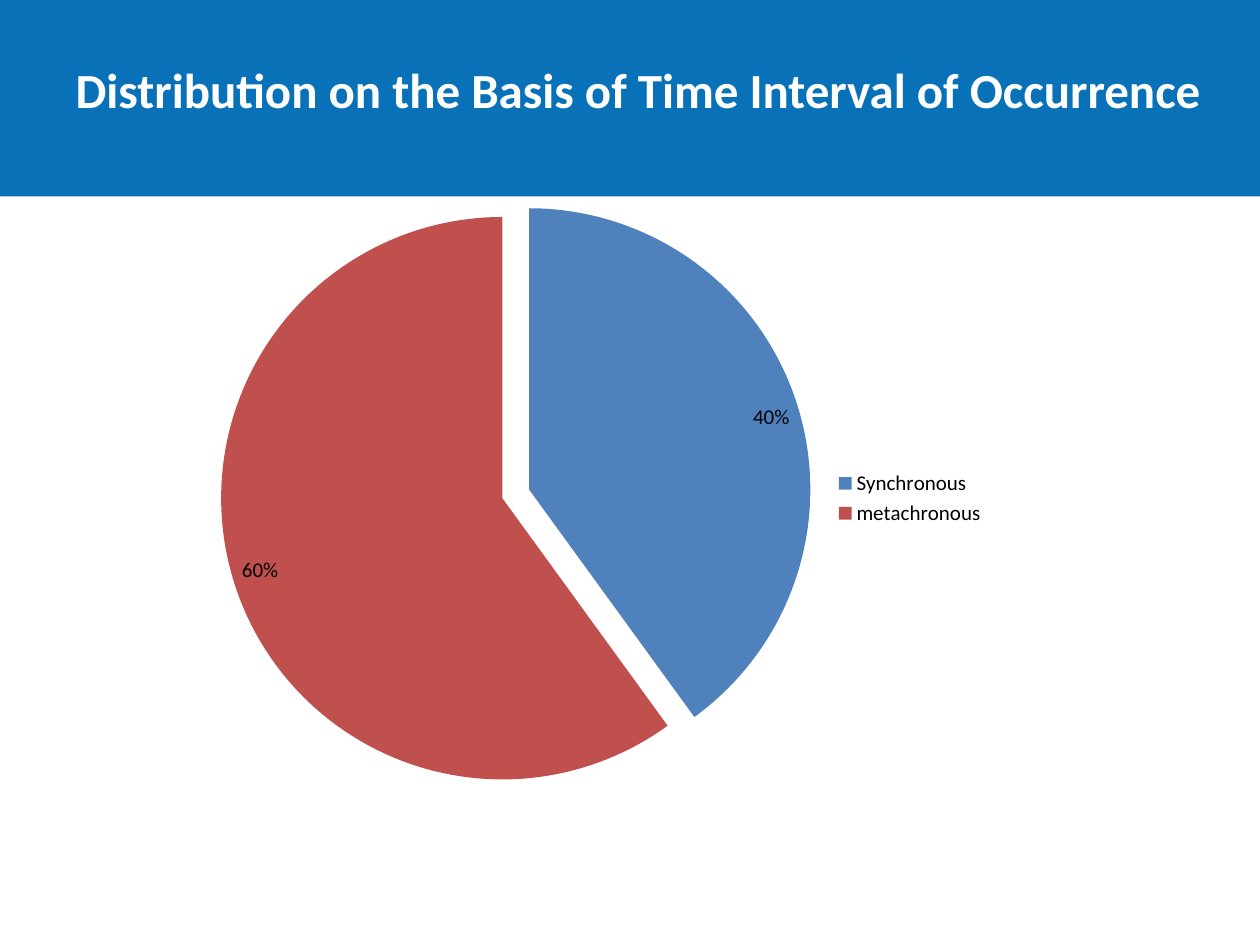
"""Build a slide with a title band and a pie chart of time intervals."""
from dataclasses import dataclass

from lxml.etree import SubElement
from pptx import Presentation
from pptx.chart.chart import Chart
from pptx.chart.data import CategoryChartData
from pptx.dml.color import RGBColor
from pptx.enum.chart import XL_CHART_TYPE as ChartType
from pptx.enum.chart import XL_LABEL_POSITION as LabelPosition
from pptx.enum.chart import XL_LEGEND_POSITION as LegendPosition
from pptx.enum.shapes import MSO_SHAPE as Shape
from pptx.enum.text import MSO_ANCHOR as Anchor
from pptx.enum.text import MSO_AUTO_SIZE as AutoSize
from pptx.enum.text import PP_ALIGN as Align
from pptx.oxml.ns import qn
from pptx.slide import Slide
from pptx.util import Inches, Pt

BAND_BLUE = RGBColor(0x09, 0x71, 0xB8)
SLICE_BLUE = RGBColor(0x4F, 0x81, 0xBD)
SLICE_RED = RGBColor(0xC0, 0x50, 0x4D)
WHITE = RGBColor(0xFF, 0xFF, 0xFF)
BLACK = RGBColor(0x00, 0x00, 0x00)
FONT = "Calibri"


@dataclass(frozen=True)
class Slice:
    label: str
    value: int
    color: RGBColor
    explosion: int = 0


SLICES = [
    Slice("Synchronous", 40, SLICE_BLUE, explosion=10),
    Slice("metachronous", 60, SLICE_RED),
]


def add_title(page: Slide, text: str) -> None:
    title = page.shapes.title
    title.left, title.top = Inches(0.5), Inches(0.42)
    title.width, title.height = Inches(9.17), Inches(0.57)
    frame = title.text_frame
    frame.text = text
    frame.word_wrap = True
    frame.auto_size = AutoSize.SHAPE_TO_FIT_TEXT
    frame.vertical_anchor = Anchor.MIDDLE
    para = frame.paragraphs[0]
    para.alignment = Align.LEFT
    para.font.name = FONT
    para.font.size = Pt(28)
    para.font.bold = True
    para.font.color.rgb = WHITE


def add_band(page: Slide) -> None:
    band = page.shapes.add_shape(Shape.RECTANGLE, 0, 0, Inches(10), Inches(1.56))
    band.shadow.inherit = False
    band.fill.solid()
    band.fill.fore_color.rgb = BAND_BLUE
    band.line.fill.background()
    page.shapes.title.element.addprevious(band.element)


def place_plot(chart: Chart, **fractions: float) -> None:
    layout = chart.plots[0].series[0]._element.getparent().getparent().find(qn("c:layout"))
    if layout is None:
        plot_area = chart.plots[0].series[0]._element.getparent().getparent()
        layout = SubElement(plot_area, qn("c:layout"))
        plot_area.insert(0, layout)
    manual = SubElement(layout, qn("c:manualLayout"))
    settings = {"layoutTarget": "inner", "xMode": "edge", "yMode": "edge", **fractions}
    for tag, value in settings.items():
        SubElement(manual, qn(f"c:{tag}")).set("val", str(value))


def explode(point_element, percent: int) -> None:
    explosion = SubElement(point_element, qn("c:explosion"))
    explosion.set("val", str(percent))
    point_element.find(qn("c:spPr")).addprevious(explosion)


def add_pie(page: Slide, slices: list[Slice]) -> None:
    data = CategoryChartData()
    data.categories = [part.label for part in slices]
    data.add_series("Series 1", [part.value for part in slices])
    chart = page.shapes.add_chart(
        ChartType.PIE, Inches(1.42), Inches(1.58), Inches(6.5), Inches(4.75), data
    ).chart
    chart.has_title = False
    chart.font.name = FONT
    chart.font.size = Pt(10)
    chart.font.color.rgb = BLACK
    chart.has_legend = True
    chart.legend.position = LegendPosition.RIGHT
    chart.legend.include_in_layout = False
    chart.legend.font.size = Pt(12)

    plot = chart.plots[0]
    plot.vary_by_categories = True
    series = plot.series[0]
    for index, part in enumerate(slices):
        fill = series.points[index].format.fill
        fill.solid()
        fill.fore_color.rgb = part.color
    for element, part in zip(series._element.findall(qn("c:dPt")), slices):
        if part.explosion:
            explode(element, part.explosion)

    labels = series.data_labels
    labels.show_percentage = True
    labels.show_value = False
    labels.number_format = "0%"
    labels.number_format_is_linked = False
    labels.position = LabelPosition.INSIDE_END
    labels.font.size = Pt(12)
    labels.font.color.rgb = BLACK
    place_plot(chart, x=0.05, y=0.03, w=0.69, h=0.94)


def main() -> None:
    deck = Presentation()
    deck.slide_width, deck.slide_height = Inches(10), Inches(7.5)
    page = deck.slides.add_slide(deck.slide_layouts[5])
    add_title(page, "Distribution on the Basis of Time Interval of Occurrence")
    add_band(page)
    add_pie(page, SLICES)
    deck.save("out.pptx")


if __name__ == "__main__":
    main()
